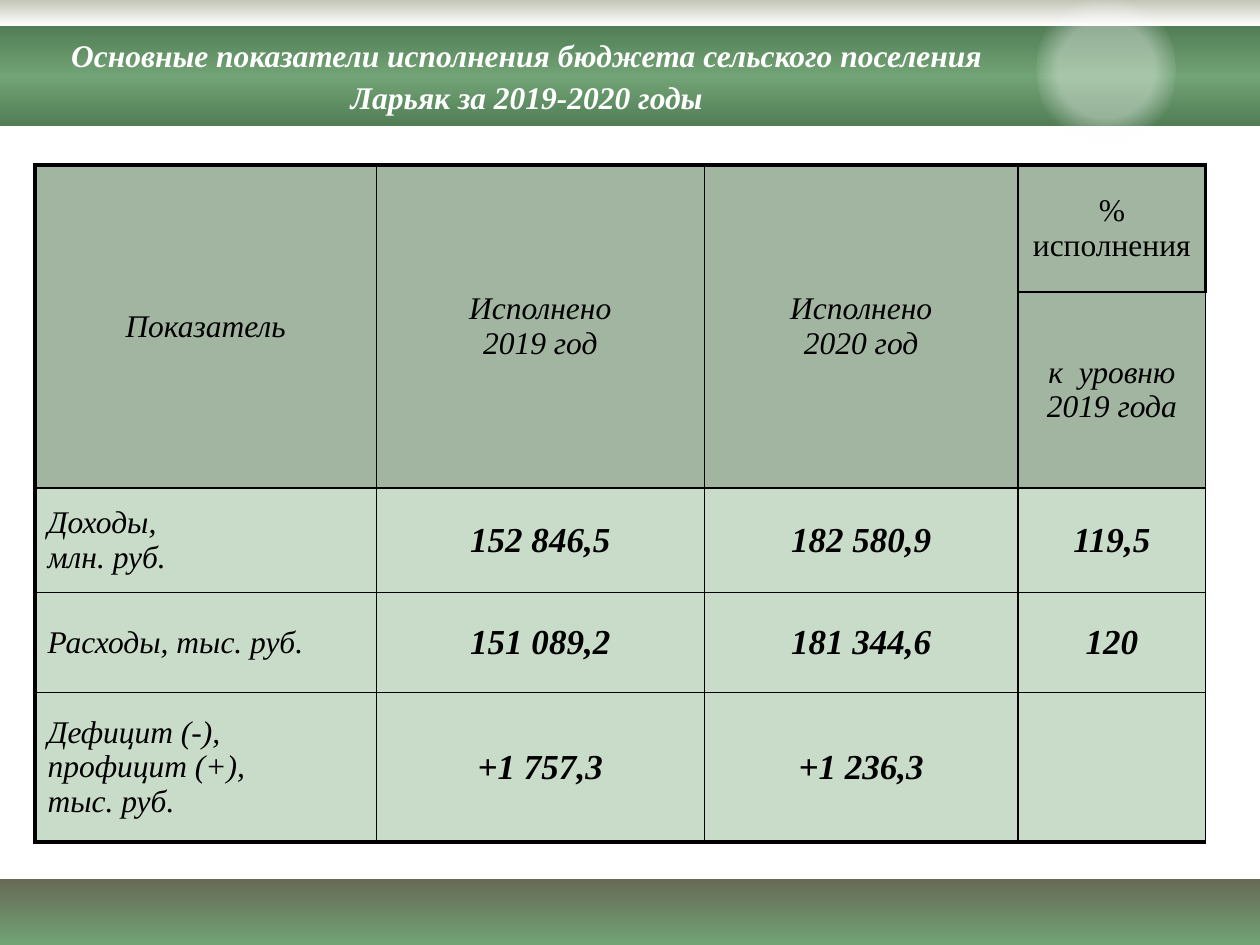
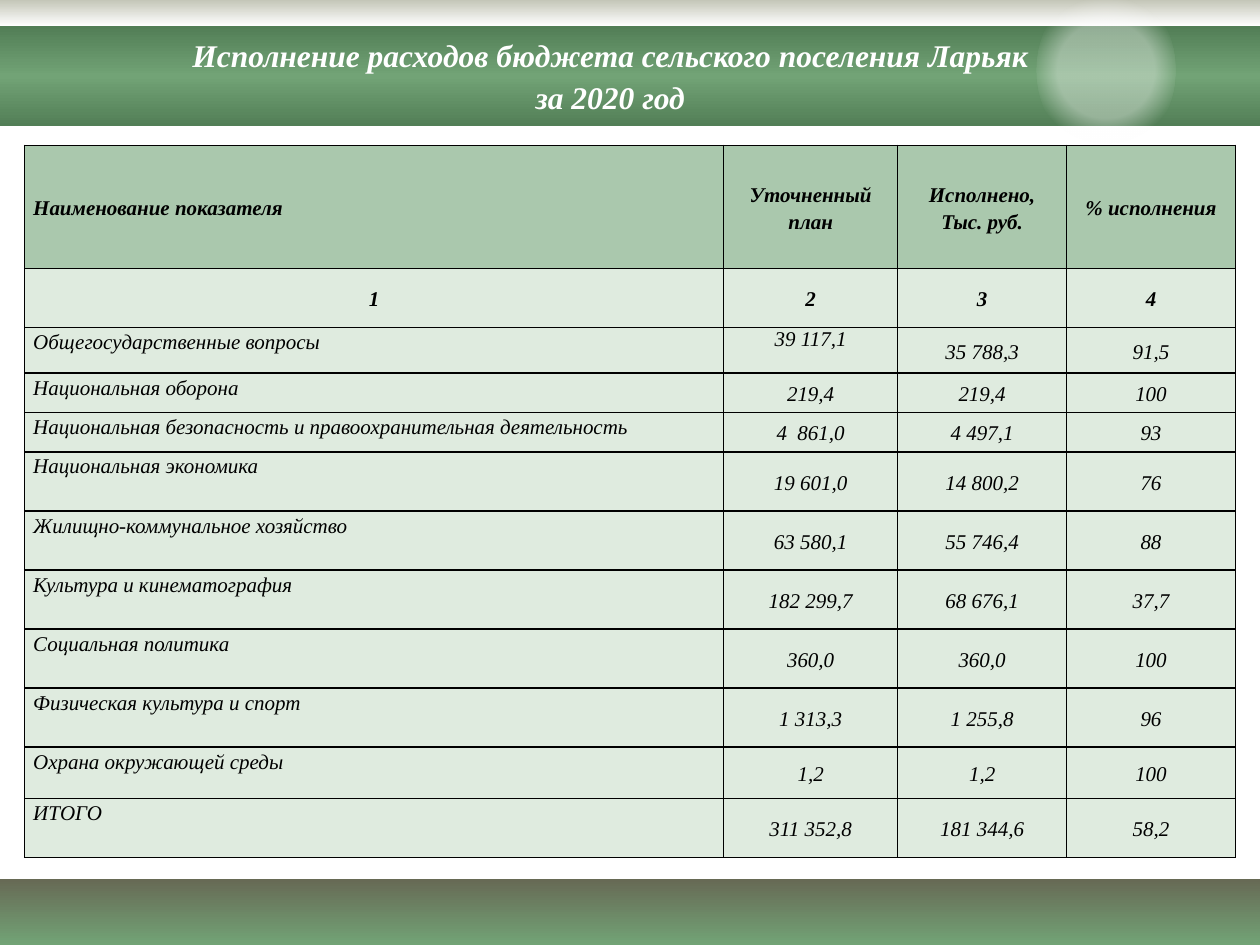
from lxml import etree
from pptx import Presentation
from pptx.dml.color import RGBColor
from pptx.enum.shapes import MSO_SHAPE
from pptx.enum.text import MSO_ANCHOR, PP_ALIGN
from pptx.oxml.ns import qn
from pptx.util import Pt

RECT, OVAL = MSO_SHAPE.RECTANGLE, MSO_SHAPE.OVAL
LEFT, CENTER = PP_ALIGN.LEFT, PP_ALIGN.CENTER
TOP, MIDDLE = MSO_ANCHOR.TOP, MSO_ANCHOR.MIDDLE

FONT = "Times New Roman"
BLACK = RGBColor(0x00, 0x00, 0x00)
WHITE = RGBColor(0xFF, 0xFF, 0xFF)
OLIVE = RGBColor(0x67, 0x6A, 0x55)
GREEN = RGBColor(0x72, 0xA3, 0x76)
DARK_GREEN = RGBColor(0x52, 0x7E, 0x56)
GREY = RGBColor(0xC4, 0xC6, 0xB8)
TOTALS_HEAD = RGBColor(0x4B, 0x73, 0x4B)
TOTALS_BODY = RGBColor(0x76, 0xA7, 0x76)
EXPENSES_HEAD = RGBColor(0xAA, 0xC8, 0xAD)
EXPENSES_BODY = RGBColor(0xDF, 0xEB, 0xDF)

BANDS = [
    (RECT, 0, 502.5, 720, 37.5, [(0, OLIVE, 100), (100, GREEN, 100)]),
    (RECT, 0, 0, 720, 15, [(0, GREY, 100), (100, WHITE, 100)]),
    (RECT, 0, 15, 720, 57, [(0, DARK_GREEN, 100), (50, GREEN, 100), (100, DARK_GREEN, 100)]),
    (OVAL, 592.5, -8, 79, 96.5, [(44, WHITE, 38), (67, WHITE, 0)]),
]

TITLES = [
    (20, 562, "Основные показатели исполнения бюджета сельского поселения Ларьяк за 2019-2020 годы"),
    (93.5, 510.5, "Исполнение расходов бюджета сельского поселения Ларьяк за 2020 год"),
]

TOTALS = [
    ["Показатель", "Исполнено\n2019 год", "Исполнено\n2020 год", "% исполнения"],
    ["", "", "", "к  уровню 2019 года"],
    ["Доходы,\nмлн. руб.", "152 846,5", "182 580,9", "119,5"],
    ["Расходы, тыс. руб.", "151 089,2", "181 344,6", "120"],
    ["Дефицит (-),\nпрофицит (+),\nтыс. руб.", "+1 757,3", "+1 236,3", ""],
]

EXPENSES = [
    ["Наименование показателя", "Уточненный план", "Исполнено,\nТыс. руб.", "% исполнения"],
    ["1", "2", "3", "4"],
    ["Общегосударственные вопросы", "39 117,1", "35 788,3", "91,5"],
    ["Национальная оборона", "219,4", "219,4", "100"],
    ["Национальная безопасность и правоохранительная деятельность", "4  861,0", "4 497,1", "93"],
    ["Национальная экономика", "19 601,0", "14 800,2", "76"],
    ["Жилищно-коммунальное хозяйство", "63 580,1", "55 746,4", "88"],
    ["Культура и кинематография", "182 299,7", "68 676,1", "37,7"],
    ["Социальная политика", "360,0", "360,0", "100"],
    ["Физическая культура и спорт", "1 313,3", "1 255,8", "96"],
    ["Охрана окружающей среды", "1,2", "1,2", "100"],
    ["ИТОГО", "311 352,8", "181 344,6", "58,2"],
]


def add_table(s, left, top, widths, heights):
    frame = s.shapes.add_table(len(heights), len(widths), Pt(left), Pt(top),
                               Pt(sum(widths)), Pt(sum(heights)))
    table = frame.table
    table.first_row = table.horz_banding = False
    for column, width in zip(table.columns, widths):
        column.width = Pt(width)
    for row, height in zip(table.rows, heights):
        row.height = Pt(height)
    return table


def set_cell(cell, text, size, bold, italic, align, anchor, spacing, margins, borders, color, alpha=100):
    cell.margin_left = cell.margin_right = Pt(margins[0])
    cell.margin_top = cell.margin_bottom = Pt(margins[1])
    cell.vertical_anchor = anchor
    tcPr = cell._tc.get_or_add_tcPr()
    for side, width in zip("LRTB", borders):
        ln = etree.SubElement(tcPr, qn(f"a:ln{side}"), w=str(Pt(width)))
        fill = etree.SubElement(ln, qn("a:solidFill"))
        etree.SubElement(fill, qn("a:srgbClr"), val=str(BLACK))
    cell.fill.solid()
    cell.fill.fore_color.rgb = color
    if alpha < 100:
        clr = tcPr.find(qn("a:solidFill")).find(qn("a:srgbClr"))
        etree.SubElement(clr, qn("a:alpha"), val=str(alpha * 1000))
    tf = cell.text_frame
    for i, line in enumerate(text.split("\n") if text else []):
        p = tf.add_paragraph() if i else tf.paragraphs[0]
        p.alignment = align
        p.line_spacing = spacing
        r = p.add_run()
        r.text = line
        r.font.name = FONT
        r.font.size = Pt(size)
        r.font.bold = bold
        r.font.italic = italic
        r.font.color.rgb = BLACK


prs = Presentation()
prs.slide_width, prs.slide_height = Pt(720), Pt(540)

slides = []
for title_left, title_width, title in TITLES:
    s = prs.slides.add_slide(prs.slide_layouts[6])
    slides.append(s)
    for kind, left, top, width, height, stops in BANDS:
        sp = s.shapes.add_shape(kind, Pt(left), Pt(top), Pt(width), Pt(height))
        sp.shadow.inherit = False
        sp.line.fill.background()
        sp.fill.gradient()
        grad = sp._element.spPr.find(qn("a:gradFill"))
        for child in list(grad):
            grad.remove(child)
        gs_list = etree.SubElement(grad, qn("a:gsLst"))
        for position, color, alpha in stops:
            gs = etree.SubElement(gs_list, qn("a:gs"), pos=str(position * 1000))
            clr = etree.SubElement(gs, qn("a:srgbClr"), val=str(color))
            if alpha < 100:
                etree.SubElement(clr, qn("a:alpha"), val=str(alpha * 1000))
        if kind == OVAL:
            circle = etree.SubElement(grad, qn("a:path"), path="circle")
            etree.SubElement(circle, qn("a:fillToRect"), l="50000", t="50000", r="50000", b="50000")
        else:
            etree.SubElement(grad, qn("a:lin"), ang="5400000", scaled="0")

    tf = s.shapes.add_textbox(Pt(title_left), Pt(15), Pt(title_width), Pt(51)).text_frame
    tf.word_wrap = True
    p = tf.paragraphs[0]
    p.alignment = CENTER
    p.line_spacing = 1.1
    r = p.add_run()
    r.text = title
    r.font.name = FONT
    r.font.size = Pt(18)
    r.font.bold = r.font.italic = True
    r.font.color.rgb = WHITE

table = add_table(slides[0], 20, 94.25, [195, 187.5, 179.25, 107.25], [72.5, 112, 60, 57, 85.5])
for col in range(3):
    table.cell(0, col).merge(table.cell(1, col))
for row, values in enumerate(TOTALS):
    head = row < 2
    for col, text in enumerate(values):
        number = not head and col > 0
        borders = (2.25 if col == 0 else 1, 2.25 if (row, col) == (0, 3) else 1,
                   2.25 if row == 0 else 1, 2.25 if row == 4 else 1)
        set_cell(table.cell(row, col), text, 20 if number else 18, number, (row, col) != (0, 3),
                 CENTER if head or number else LEFT, MIDDLE, 1.0, (7.2, 3.6), borders,
                 TOTALS_HEAD if head else TOTALS_BODY, 52 if head else 39)

table = add_table(slides[1], 14, 83, [399.5, 99.5, 96.5, 96.5],
                  [70.5, 33.75, 26, 22.5, 22.5] + [33.75] * 5 + [29.5, 33.75])
for row, values in enumerate(EXPENSES):
    for col, text in enumerate(values):
        first_sum = (row, col) == (2, 1)
        name = row > 1 and col == 0
        set_cell(table.cell(row, col), text, 12, row < 2, True,
                 LEFT if name or (row, col) == (0, 0) else CENTER,
                 TOP if name or first_sum else MIDDLE, 1.0 if first_sum else 1.15, (5, 0), (1, 1, 1, 1),
                 EXPENSES_BODY if row else EXPENSES_HEAD)

prs.save("out.pptx")
